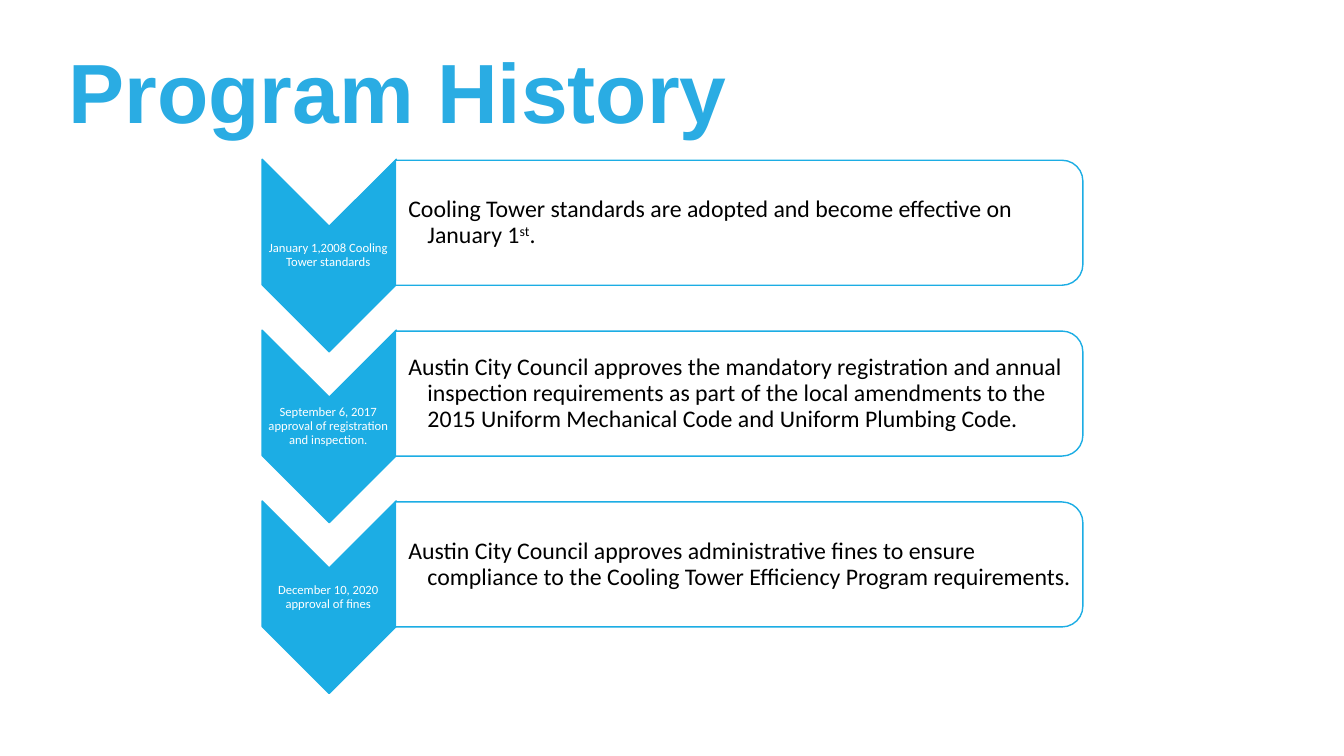
from dataclasses import dataclass

from pptx import Presentation
from pptx.dml.color import RGBColor
from pptx.enum.shapes import MSO_SHAPE
from pptx.enum.text import MSO_ANCHOR, MSO_AUTO_SIZE, PP_ALIGN
from pptx.oxml.ns import qn
from pptx.util import Inches, Pt

CHEVRON = MSO_SHAPE.CHEVRON
ROUNDED_PANEL = MSO_SHAPE.ROUND_2_SAME_RECTANGLE
MIDDLE = MSO_ANCHOR.MIDDLE
NO_AUTOFIT = MSO_AUTO_SIZE.NONE
LEFT, CENTER = PP_ALIGN.LEFT, PP_ALIGN.CENTER
TITLE_ONLY = 5


@dataclass(frozen=True)
class Theme:
    title_color: RGBColor = RGBColor(0x2A, 0xAC, 0xE3)
    accent: RGBColor = RGBColor(0x1C, 0xAD, 0xE4)
    white: RGBColor = RGBColor(0xFF, 0xFF, 0xFF)
    black: RGBColor = RGBColor(0, 0, 0)
    title_font: str = "Arial"
    body_font: str = "Calibri"
    title_size: int = 60
    body_size: int = 17
    label_size: int = 9
    line_width: int = 1
    line_spacing: float = 0.9


FIRST_TOP = 1.65
ROW_PITCH = 1.695
# Each milestone: chevron label, then (text, superscript) spans of its description.
MILESTONES = [
    ("January 1,2008 Cooling Tower standards",
     [("Cooling Tower standards are adopted and become effective on January 1", False),
      ("st", True), (".", False)]),
    ("September 6, 2017 approval of registration and inspection.",
     [("Austin City Council approves the mandatory registration and annual "
       "inspection requirements as part of the local amendments to the 2015 "
       "Uniform Mechanical Code and Uniform Plumbing Code.", False)]),
    ("December 10, 2020 approval of fines",
     [("Austin City Council approves administrative fines to ensure compliance "
       "to the Cooling Tower Efficiency Program requirements.", False)]),
]


class SlideBuilder:
    def __init__(self, slide, theme):
        self.slide = slide
        self.theme = theme

    def format_paragraph(self, para, name, size, color, align, bold=False):
        para.alignment = align
        para.line_spacing = self.theme.line_spacing
        para.font.name = name
        para.font.size = Pt(size)
        para.font.color.rgb = color
        para.font.bold = bold

    def title(self, text, left, top, width, height):
        title = self.slide.shapes.title
        title.left, title.top = Inches(left), Inches(top)
        title.width, title.height = Inches(width), Inches(height)
        frame = title.text_frame
        frame.text = text
        frame.auto_size = NO_AUTOFIT
        frame.vertical_anchor = MIDDLE
        self.format_paragraph(frame.paragraphs[0], self.theme.title_font,
                              self.theme.title_size, self.theme.title_color, LEFT, True)

    def turned_shape(self, kind, left, top, width, height, fill, opacity=100):
        """Add a shape turned a quarter right; the bounds are those seen on the slide."""
        shift = (width - height) / 2
        shape = self.slide.shapes.add_shape(kind, Inches(left + shift), Inches(top - shift),
                                            Inches(height), Inches(width))
        shape.rotation = 90
        shape.shadow.inherit = False
        shape.fill.solid()
        shape.fill.fore_color.rgb = fill
        if opacity < 100:
            color = shape.fill._xPr.find(qn("a:solidFill"))[0]
            alpha = color.makeelement(qn("a:alpha"), {"val": str(opacity * 1000)})
            color.append(alpha)
        shape.line.color.rgb = self.theme.accent
        shape.line.width = Pt(self.theme.line_width)

    def text_box(self, spans, left, top, width, height, size, color,
                 align=LEFT, inset=0.01, hanging=0):
        box = self.slide.shapes.add_textbox(Inches(left), Inches(top),
                                            Inches(width), Inches(height))
        frame = box.text_frame
        frame.word_wrap = True
        frame.vertical_anchor = MIDDLE
        frame.margin_left = Inches(inset)
        frame.margin_top = frame.margin_right = frame.margin_bottom = Inches(0.01)
        para = frame.paragraphs[0]
        if hanging:
            para.level = 1
            properties = para._p.get_or_add_pPr()
            properties.set("marL", str(Inches(hanging)))
            properties.set("indent", str(-Inches(hanging)))
        for text, superscript in spans:
            span = para.add_run()
            span.text = text
            if superscript:
                span.font._element.set("baseline", "30000")
        self.format_paragraph(para, self.theme.body_font, size, color, align)

    def milestone(self, top, label, description):
        theme = self.theme
        self.turned_shape(CHEVRON, 2.6, top - 0.07, 1.33, 1.91, theme.accent)
        self.text_box([(label, False)], 2.59, top + 0.6, 1.33, 0.57,
                      theme.label_size, theme.white, CENTER)
        self.turned_shape(ROUNDED_PANEL, 3.92, top - 0.06, 6.82, 1.24, theme.white, 90)
        self.text_box(description, 3.92, top, 6.76, 1.12, theme.body_size, theme.black,
                      inset=0.13, hanging=0.19)


def main():
    deck = Presentation()
    deck.slide_width, deck.slide_height = Inches(13.33), Inches(7.5)
    page = SlideBuilder(deck.slides.add_slide(deck.slide_layouts[TITLE_ONLY]), Theme())
    page.title("Program History", 0.58, 0.25, 12, 1.42)
    for row, (label, description) in enumerate(MILESTONES):
        page.milestone(FIRST_TOP + row * ROW_PITCH, label, description)
    deck.save("out.pptx")


if __name__ == "__main__":
    main()
